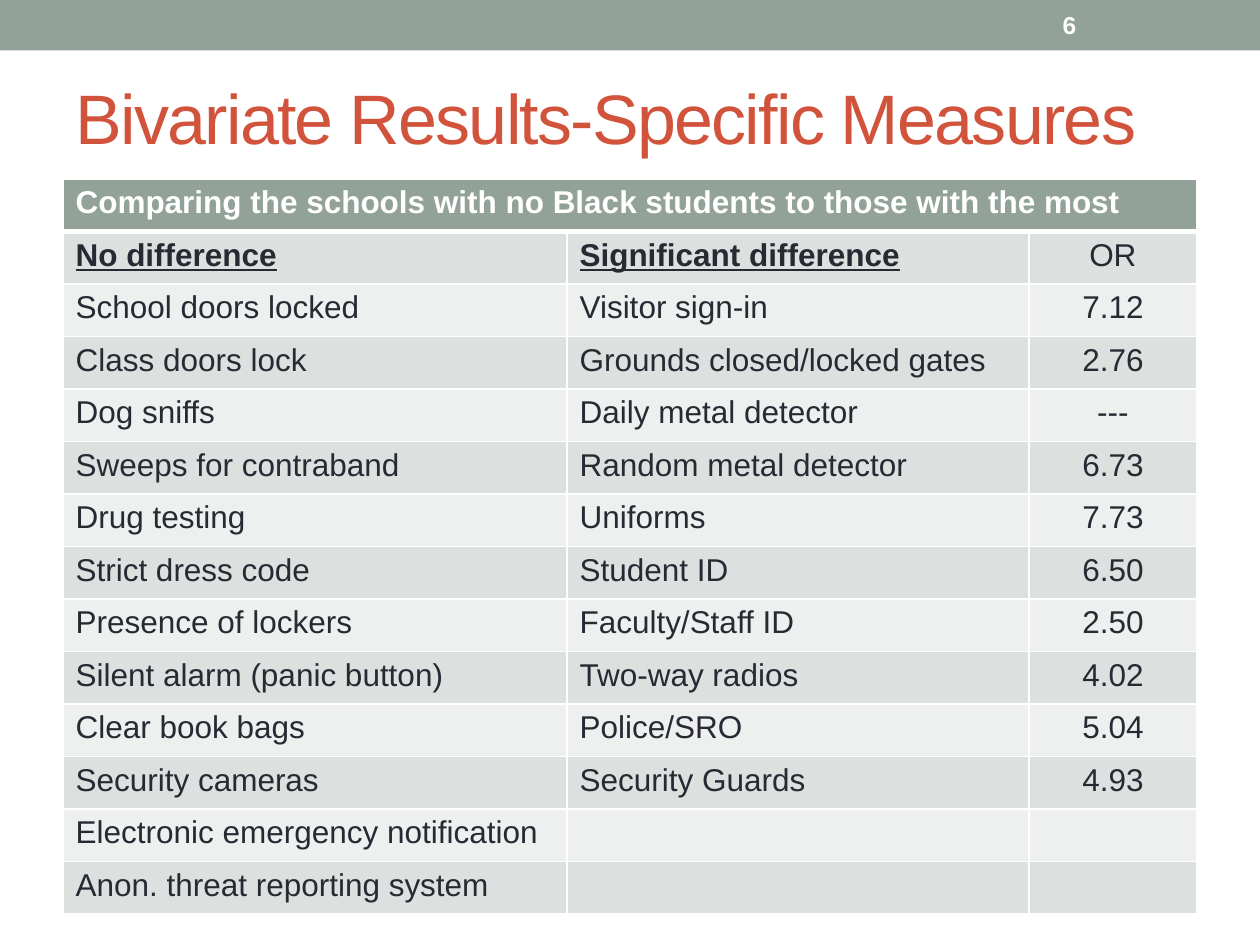
from lxml import etree
from pptx import Presentation
from pptx import util as u
from pptx.dml.color import RGBColor
from pptx.enum import shapes, text
from pptx.oxml.ns import qn

TITLE = "Bivariate Results-Specific Measures"
PAGE = "6"
HEADING = "Comparing the schools with no Black students to those with the most"
LABELS = ("No difference", "Significant difference", "OR")
NO_DIFFERENCE = [
    "School doors locked", "Class doors lock", "Dog sniffs",
    "Sweeps for contraband", "Drug testing", "Strict dress code",
    "Presence of lockers", "Silent alarm (panic button)", "Clear book bags",
    "Security cameras", "Electronic emergency notification",
    "Anon. threat reporting system",
]
SIGNIFICANT = [
    ("Visitor sign-in", "7.12"), ("Grounds closed/locked gates", "2.76"),
    ("Daily metal detector", "---"), ("Random metal detector", "6.73"),
    ("Uniforms", "7.73"), ("Student ID", "6.50"),
    ("Faculty/Staff ID", "2.50"), ("Two-way radios", "4.02"),
    ("Police/SRO", "5.04"), ("Security Guards", "4.93"),
]
THEME = {
    "font": "Arial", "title_size": 40, "body_size": 18, "page_size": 14,
    "accent": "93A299", "title": "D2533C", "ink": "292934", "white": "FFFFFF",
    "bands": ("DCE0DE", "EEF0EF"),
}
COLUMNS = (10.16, 9.31, 3.39)
LEFT, TOP, TABLE_HEIGHT = 1.27, 3.61, 14.82


def rgb(name):
    return RGBColor.from_string(THEME.get(name, name))


def add_run(p, words, size, color, bold=False, underline=False):
    r = p.add_run()
    r.text = words
    f = r.font
    f.name, f.size, f.bold, f.underline = THEME["font"], u.Pt(THEME[size]), bold, underline
    f.color.rgb = rgb(color)
    return r


def set_borders(cell, widths):
    tc_pr = cell._tc.get_or_add_tcPr()
    for side, width in zip("LRTB", widths):
        ln = etree.SubElement(tc_pr, qn(f"a:ln{side}"), w=str(u.Pt(width)))
        fill = etree.SubElement(ln, qn("a:solidFill"))
        etree.SubElement(fill, qn("a:srgbClr"), val=THEME["white"])


def style_cell(cell, fill, bottom=1):
    set_borders(cell, (1, 1, 1, bottom))
    cell.fill.solid()
    cell.fill.fore_color.rgb = rgb(fill)


prs = Presentation()
prs.slide_width, prs.slide_height = u.Cm(25.4), u.Cm(19.05)
s = prs.slides.add_slide(prs.slide_layouts[5])

bar = s.shapes.add_shape(shapes.MSO_SHAPE.RECTANGLE, 0, 0, prs.slide_width, u.Cm(1.02))
bar.shadow.inherit = False
bar.fill.solid()
bar.fill.fore_color.rgb = rgb("accent")
bar.line.fill.background()

sp = s.shapes.title
sp.left, sp.top, sp.width, sp.height = u.Cm(LEFT), u.Cm(1.07), u.Cm(22.86), u.Cm(2.54)
tf = sp.text_frame
tf.auto_size = text.MSO_AUTO_SIZE.NONE
tf.vertical_anchor = text.MSO_ANCHOR.MIDDLE
p = tf.paragraphs[0]
p.alignment = text.PP_ALIGN.LEFT
r = add_run(p, TITLE, "title_size", "title")
r.font._element.set("spc", "-100")

pairs = SIGNIFICANT + [("", "")] * (len(NO_DIFFERENCE) - len(SIGNIFICANT))
rows = [LABELS] + [(left, *pair) for left, pair in zip(NO_DIFFERENCE, pairs)]
count = len(rows) + 1
table = s.shapes.add_table(count, len(COLUMNS), u.Cm(LEFT), u.Cm(TOP),
                           u.Cm(sum(COLUMNS)), u.Cm(TABLE_HEIGHT)).table
for column, width in zip(table.columns, COLUMNS):
    column.width = u.Cm(width)
for row in table.rows:
    row.height = u.Cm(TABLE_HEIGHT / count)

for cell in table.rows[0].cells:
    style_cell(cell, "accent", bottom=3)
heading = table.cell(0, 0)
heading.merge(table.cell(0, len(COLUMNS) - 1))
add_run(heading.text_frame.paragraphs[0], HEADING, "body_size", "white", bold=True)

for i, row in enumerate(rows):
    for j, words in enumerate(row):
        cell = table.cell(i + 1, j)
        style_cell(cell, THEME["bands"][i % 2])
        p = cell.text_frame.paragraphs[0]
        if j == 2:
            p.alignment = text.PP_ALIGN.CENTER
        if words:
            label = i == 0 and j < 2
            add_run(p, words, "body_size", "ink", bold=label, underline=label)

sp = s.shapes.add_textbox(u.Cm(21.17), u.Cm(0.05), u.Cm(2.96), u.Cm(0.91))
tf = sp.text_frame
tf.word_wrap = True
tf.vertical_anchor = text.MSO_ANCHOR.MIDDLE
add_run(tf.paragraphs[0], PAGE, "page_size", "white", bold=True)

prs.save("out.pptx")
